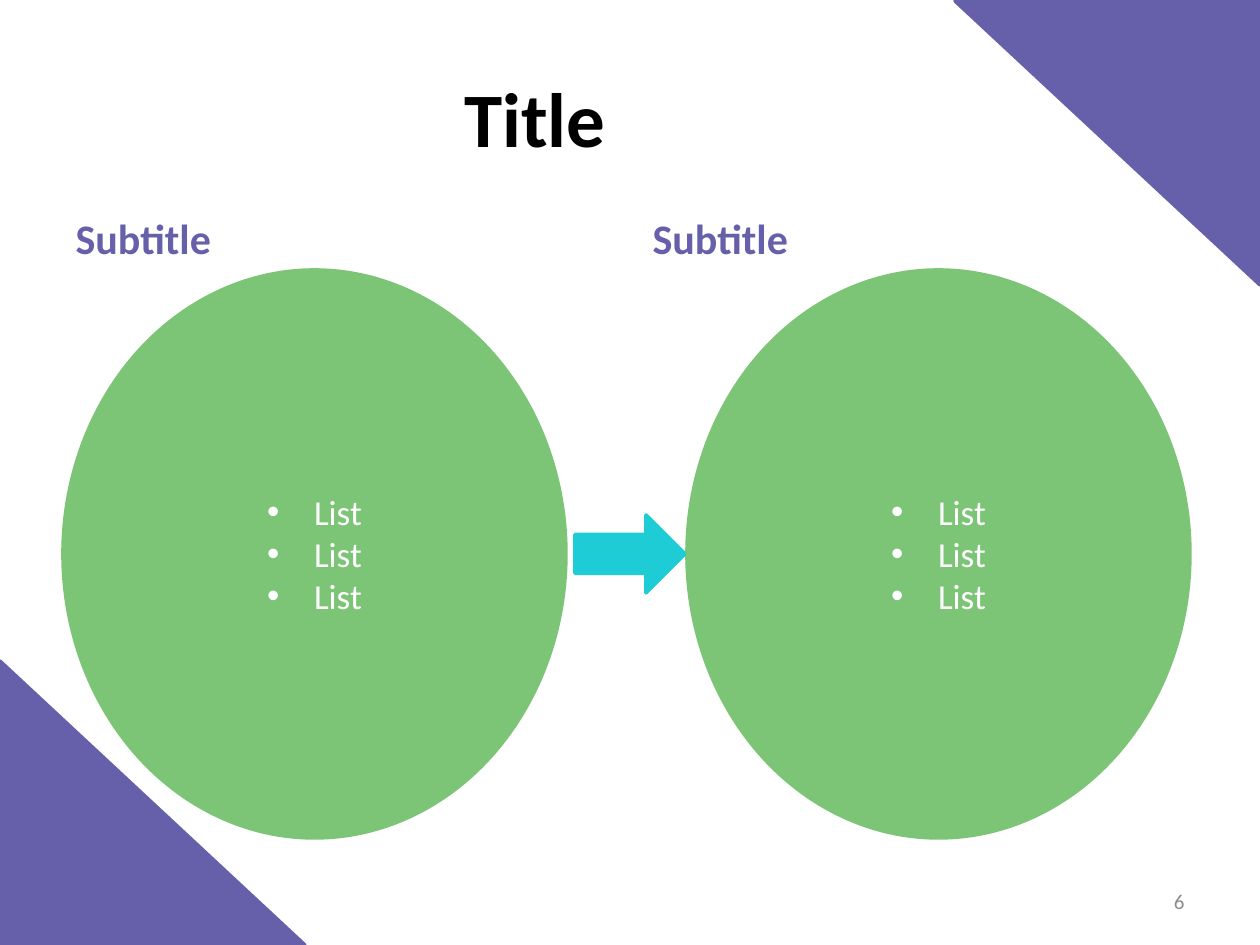
"""Builds a comparison slide: two listed circles joined by an arrow."""
import lxml.etree
import pptx
import pptx.dml.color
import pptx.enum.shapes
import pptx.enum.text
import pptx.oxml.ns
import pptx.util

PX_PER_INCH = 126
PURPLE = pptx.dml.color.RGBColor(0x66, 0x60, 0xAB)
GREEN = pptx.dml.color.RGBColor(0x7D, 0xC5, 0x76)
TURQUOISE = pptx.dml.color.RGBColor(0x1D, 0xCC, 0xD4)
GREY = pptx.dml.color.RGBColor(0x8C, 0x8C, 0x8C)
BLACK = pptx.dml.color.RGBColor(0, 0, 0)
WHITE = pptx.dml.color.RGBColor(0xFF, 0xFF, 0xFF)
SHAPE = pptx.enum.shapes.MSO_SHAPE
ALIGN = pptx.enum.text.PP_ALIGN
ANCHOR = pptx.enum.text.MSO_ANCHOR


def px(length):
    return round(length * pptx.util.Inches(1) / PX_PER_INCH)


def write(box, text, size, color, align, anchor=ANCHOR.MIDDLE, bold=False):
    frame = box.text_frame
    frame.text = text
    frame.word_wrap = True
    frame.vertical_anchor = anchor
    for para in frame.paragraphs:
        para.alignment = align
        for span in para.runs:
            span.font.name = "Calibri"
            span.font.size = pptx.util.Pt(size)
            span.font.bold = bold
            span.font.color.rgb = color


def place(box, left, top, width, height):
    box.left, box.top = px(left), px(top)
    box.width, box.height = px(width), px(height)


def add_solid(page, kind, color, left, top, width, height):
    shape = page.shapes.add_shape(kind, px(left), px(top), px(width), px(height))
    shape.shadow.inherit = False
    shape.fill.solid()
    shape.fill.fore_color.rgb = color
    shape.line.color.rgb = color
    shape.line.width = pptx.util.Pt(2)
    return shape


def add_bullets(box, indent):
    for para in box.text_frame.paragraphs:
        props = para._p.get_or_add_pPr()
        props.set("marL", str(px(indent)))
        props.set("indent", str(-px(indent)))
        font = lxml.etree.SubElement(props, pptx.oxml.ns.qn("a:buFont"))
        font.set("typeface", "Arial")
        bullet = lxml.etree.SubElement(props, pptx.oxml.ns.qn("a:buChar"))
        bullet.set("char", "•")


def add_list_circle(page, left, items):
    circle = add_solid(page, SHAPE.OVAL, GREEN, left, 270, 503, 568)
    write(circle, "\n".join(items), 20, WHITE, ALIGN.CENTER)
    add_bullets(circle, 47)


def add_subtitle(box, left, text):
    place(box, left, 181, 557, 88)
    write(box, text, 24, PURPLE, ALIGN.LEFT, ANCHOR.BOTTOM, bold=True)


def add_page_number(page, number):
    box = page.shapes.add_textbox(px(903), px(876), px(294), px(50))
    write(box, number, 12, GREY, ALIGN.RIGHT)


def main():
    deck = pptx.Presentation()
    deck.slide_width, deck.slide_height = px(1260), px(945)
    page = deck.slides.add_slide(deck.slide_layouts.get_by_name("Comparison"))
    title, left_head, left_body, right_head, right_body = page.placeholders
    for empty in (left_body, right_body):
        empty.element.getparent().remove(empty.element)

    place(title, 63, 38, 944, 158)
    write(title, "Title", 44, BLACK, ALIGN.CENTER, bold=True)
    add_subtitle(left_head, 63, "Subtitle")
    add_subtitle(right_head, 640, "Subtitle")
    add_page_number(page, "6")

    add_solid(page, SHAPE.RIGHT_TRIANGLE, PURPLE, 0, 661, 305, 284)
    corner = add_solid(page, SHAPE.RIGHT_TRIANGLE, PURPLE, 955, 1, 305, 284)
    corner.rotation = 180
    for left in (63, 687):
        add_list_circle(page, left, ["List"] * 3)
    add_solid(page, SHAPE.RIGHT_ARROW, TURQUOISE, 575, 515, 110, 78)
    deck.save("out.pptx")


if __name__ == "__main__":
    main()
